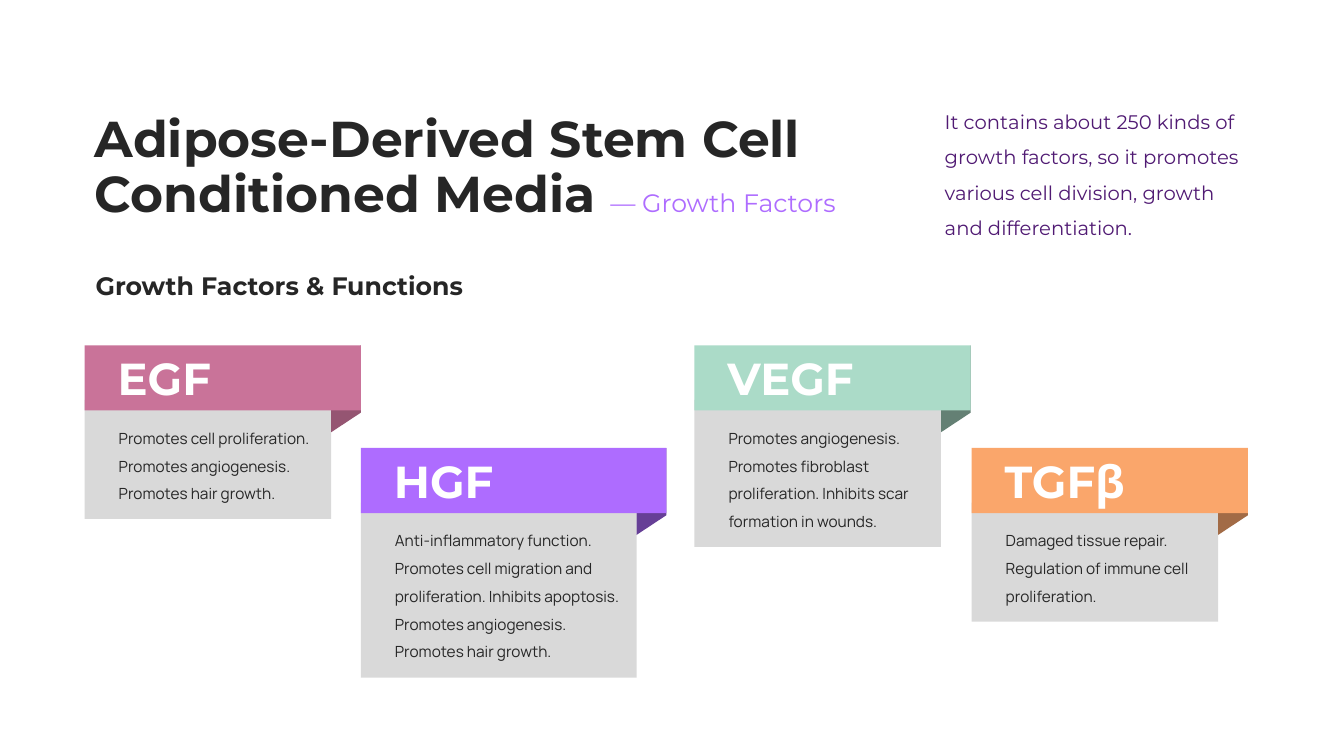
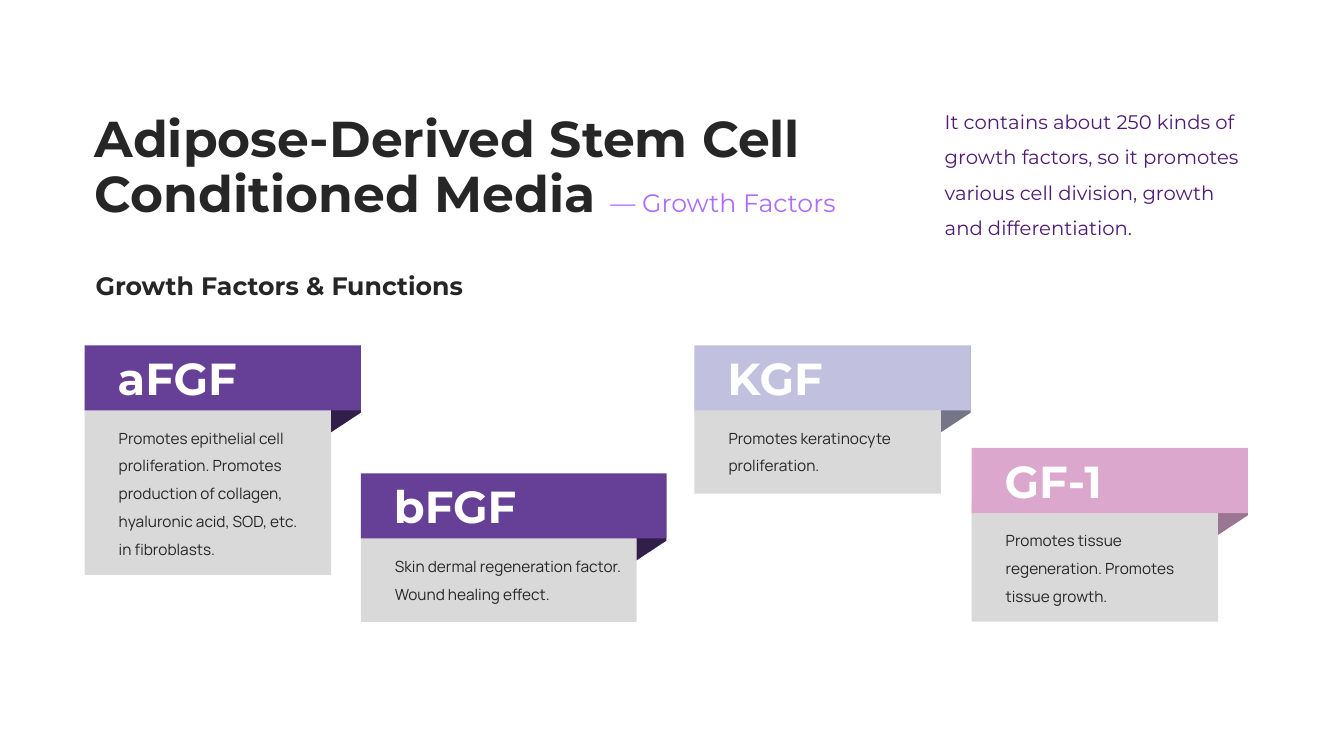
from dataclasses import dataclass

from pptx import Presentation
from pptx.dml.color import RGBColor
from pptx.enum import shapes, text
from pptx.oxml import xmlchemy
from pptx.util import Pt

HEAD_FONT, BODY_FONT = "Montserrat", "Manrope"
INK, PANEL, WHITE = "262626", "D9D9D9", "FFFFFF"
VIOLET, PLUM = "AE6CFF", "501A73"
PURPLE, NIGHT = "663F96", "311E49"

HEAD_H = 46.5  # header band height
FOLD_W, FOLD_H = 21.2, 62
ROW_1, ROW_2, ROW_3 = 246.7, 320, 338.2
COLUMNS = ((60.5, 197.3), (257.8, 218.2), (496.1, 197.3), (694.1, 197.3))


@dataclass
class Card:
    name: str
    body: str
    top: float
    body_h: float
    colour: str
    fold: str


SLIDES = [
    [
        Card("EGF", "Promotes cell proliferation. Promotes angiogenesis.\n"
             "Promotes hair growth.", ROW_1, 85, "C97399", "955572"),
        Card("HGF", "Anti-inflammatory function.\vPromotes cell migration and "
             "proliferation. Inhibits apoptosis. Promotes angiogenesis. "
             "Promotes hair growth.", ROW_2, 125, VIOLET, PURPLE),
        Card("VEGF", "Promotes angiogenesis.\vPromotes fibroblast proliferation. "
             "Inhibits scar formation in wounds.", ROW_1, 105, "ABDBC8", "648074"),
        Card("TGFβ", "Damaged tissue repair.\vRegulation of immune cell "
             "proliferation.", ROW_2, 85, "FAA66B", "A26B46"),
    ],
    [
        Card("aFGF", "Promotes epithelial cell proliferation. Promotes production "
             "of collagen, hyaluronic acid, SOD, etc. \vin fibroblasts.",
             ROW_1, 125, PURPLE, NIGHT),
        Card("bFGF", "Skin dermal regeneration factor. Wound healing effect.",
             ROW_3, 67, PURPLE, NIGHT),
        Card("KGF", "Promotes keratinocyte proliferation.",
             ROW_1, 67, "C2C0DF", "767588"),
        Card("GF-1", "Promotes tissue regeneration. Promotes tissue growth.",
             ROW_2, 85, "DBA7CD", "9B7692"),
    ],
]


def rgb(colour: str) -> RGBColor:
    return RGBColor.from_string(colour)


def format_run(r, size: float, colour: str, bold: bool = False,
               font: str = HEAD_FONT) -> None:
    r.font.name, r.font.size, r.font.bold = font, Pt(size), bold
    r.font.color.rgb = rgb(colour)


def write(sp, content: str, size: float, colour: str, bold: bool = False,
          font: str = HEAD_FONT, spacing: float = 1.0, middle: bool = False):
    """Fill a text box or placeholder with evenly formatted, left-aligned text."""
    tf = sp.text_frame
    tf.text = content
    tf.word_wrap = True
    tf.auto_size = text.MSO_AUTO_SIZE.NONE
    tf.vertical_anchor = (text.MSO_ANCHOR.MIDDLE if middle
                          else text.MSO_ANCHOR.TOP)
    for p in tf.paragraphs:
        p.alignment = text.PP_ALIGN.LEFT
        p.line_spacing, p.space_before = spacing, Pt(0)
        for r in p.runs:
            format_run(r, size, colour, bold, font)
    return tf


def place(sp, x: float, y: float, w: float, h: float) -> None:
    sp.left, sp.top, sp.width, sp.height = Pt(x), Pt(y), Pt(w), Pt(h)


def add_label(s, x: float, y: float, w: float, h: float, *args, **style) -> None:
    write(s.shapes.add_textbox(Pt(x), Pt(y), Pt(w), Pt(h)), *args, **style)


def add_block(s, kind, x: float, y: float, w: float, h: float, colour: str):
    sp = s.shapes.add_shape(kind, Pt(x), Pt(y), Pt(w), Pt(h))
    sp.shadow.inherit = False
    sp.fill.solid()
    sp.fill.fore_color.rgb = rgb(colour)
    sp.line.fill.background()
    return sp


def add_card(s, card: Card, x: float, w: float) -> None:
    """Draw the grey panel, then the ribbon fold, then the header over both."""
    rect = shapes.MSO_SHAPE.RECTANGLE
    panel_w = w - FOLD_W
    add_block(s, rect, x, card.top + 39, panel_w, card.body_h, PANEL)

    # The fold is given by its unturned frame, centred on the turned one
    mid_x, mid_y = x + panel_w + FOLD_W / 2, card.top + FOLD_H / 2
    fold = add_block(s, shapes.MSO_SHAPE.PARALLELOGRAM, mid_x - FOLD_H / 2,
                     mid_y - FOLD_W / 2, FOLD_H, FOLD_W, card.fold)
    fold.adjustments[0] = 0.66
    fold.rotation = 90
    fold._element.spPr.get_or_add_xfrm().set("flipV", "1")

    add_block(s, rect, x, card.top, w, HEAD_H, card.colour)
    add_label(s, x + 17.2, card.top + 49.5, w - 33.2, card.body_h - 20,
              card.body, 11, INK, font=BODY_FONT, spacing=1.5)
    add_label(s, x + 16.5, card.top + 0.2, 150, HEAD_H, card.name, 32, WHITE,
              bold=True)


def add_frame(s) -> None:
    """Add the title, introduction and subtitle all slides share."""
    title = s.shapes.title
    place(title, 60.5, 85.5, 588, 70)
    tf = write(title, "Adipose-Derived Stem Cell Conditioned Media ", 36, INK,
               bold=True, spacing=0.9, middle=True)
    r = tf.paragraphs[0].add_run()
    r.text = "— Growth Factors"
    format_run(r, 18, VIOLET)

    intro = s.placeholders[1]
    place(intro, 667.6, 69.8, 229.7, 101.5)
    tf = write(intro, "It contains about 250 kinds of growth factors, so it promotes "
               "various cell division, growth and differentiation.", 14, PLUM,
               spacing=1.5, middle=True)
    pPr = tf.paragraphs[0]._p.get_or_add_pPr()
    pPr.set("marL", "0")
    pPr.set("indent", "0")
    pPr.append(xmlchemy.OxmlElement("a:buNone"))

    add_label(s, 61.2, 184.3, 284.4, 41.8, "Growth Factors & Functions", 18, INK,
              bold=True, spacing=0.9, middle=True)


def main() -> None:
    prs = Presentation()
    prs.slide_width, prs.slide_height = Pt(960), Pt(540)
    for cards in SLIDES:
        s = prs.slides.add_slide(prs.slide_layouts[1])
        add_frame(s)
        for card, (x, w) in zip(cards, COLUMNS):
            add_card(s, card, x, w)
    prs.save("out.pptx")


if __name__ == "__main__":
    main()
